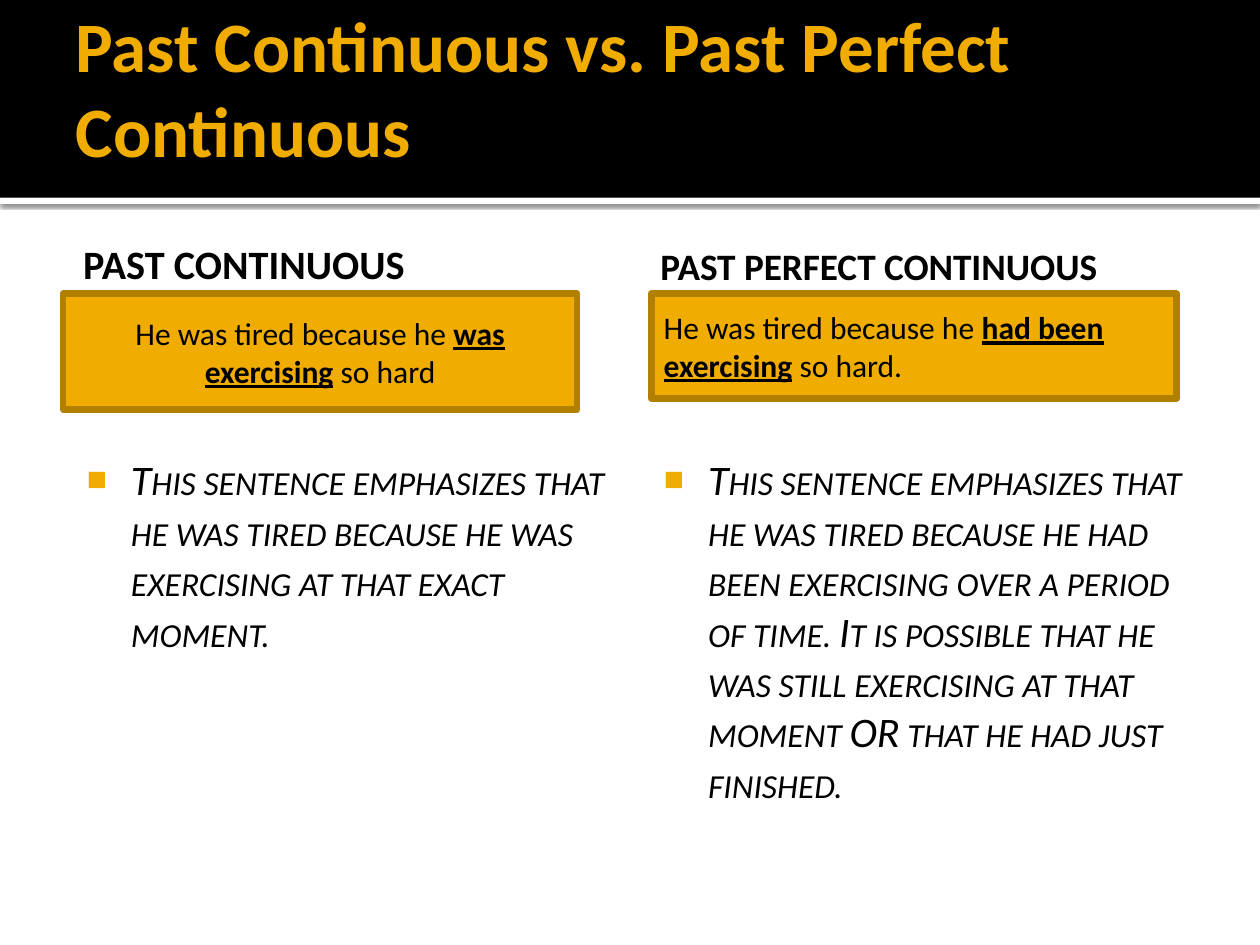
from lxml import etree
from pptx import Presentation
from pptx import util as u
from pptx.dml.color import RGBColor
from pptx.enum import shapes, text
from pptx.oxml.ns import qn

COLORS = {"black": "000000", "white": "FFFFFF", "gold": "F0AD00", "brown": "B28000"}
MIDDLE, TOP = text.MSO_ANCHOR.MIDDLE, text.MSO_ANCHOR.TOP
LEFT, CENTER = text.PP_ALIGN.LEFT, text.PP_ALIGN.CENTER


def rgb(name):
    return RGBColor.from_string(COLORS[name])


def assign(obj, values):
    for key, value in values.items():
        setattr(obj, key, value)


class Deck:
    font = "Calibri"

    def __init__(self, width, height):
        self.prs = Presentation()
        assign(self.prs, {"slide_width": u.Pt(width), "slide_height": u.Pt(height)})
        self.s = self.prs.slides.add_slide(self.prs.slide_layouts[4])

    def rect(self, box, fill):
        sp = self.s.shapes.add_shape(shapes.MSO_SHAPE.RECTANGLE, *map(u.Pt, box))
        sp.shadow.inherit = False
        sp.fill.solid()
        sp.fill.fore_color.rgb = rgb(fill)
        sp.line.fill.background()
        return sp

    def band(self, box, fill, shadow=False):
        sp = self.rect(box, fill)
        if shadow:
            effects = sp._element.spPr.find(qn("a:effectLst"))
            outer = etree.SubElement(effects, qn("a:outerShdw"), blurRad=str(u.Pt(2.5)),
                                     dist=str(u.Pt(0.8)), dir="5400000")
            color = etree.SubElement(outer, qn("a:srgbClr"), val=COLORS["black"])
            etree.SubElement(color, qn("a:alpha"), val="60000")
        sp._element.getparent().insert(2, sp._element)

    def add_text(self, tf, runs, size, color="black", align=LEFT, **fmt):
        p = tf.paragraphs[0]
        assign(p, {"alignment": align, "space_before": u.Pt(0)})
        for words, extra in runs:
            r = p.add_run()
            r.text = words
            assign(r.font, {"name": self.font, "size": u.Pt(size), **fmt, **extra})
            r.font.color.rgb = rgb(color)
        return p

    def placeholder(self, idx, box, insets, anchor, words, size, **fmt):
        sp = self.s.placeholders[idx]
        assign(sp, dict(zip(("left", "top", "width", "height"), map(u.Pt, box))))
        tf = sp.text_frame
        sides = ("margin_left", "margin_top", "margin_right", "margin_bottom")
        assign(tf, {"word_wrap": True, "auto_size": text.MSO_AUTO_SIZE.NONE,
                    "vertical_anchor": anchor, **dict(zip(sides, map(u.Pt, insets)))})
        return self.add_text(tf, [(words, {})], size, **fmt)

    def bullet(self, idx, box, words):
        p = self.placeholder(idx, box, (4.3, 66.4, 7.2, 3.6), TOP, words, 24, italic=True)
        p.line_spacing = u.Pt(28.8)
        pPr = p._p.get_or_add_pPr()
        for key, value in {"marL": u.Pt(34.5), "indent": u.Pt(-25.2)}.items():
            pPr.set(key, str(value))
        color = etree.SubElement(pPr, qn("a:buClr"))
        etree.SubElement(color, qn("a:srgbClr"), val=COLORS["gold"])
        etree.SubElement(pPr, qn("a:buSzPct"), val="80000")
        etree.SubElement(pPr, qn("a:buFont"), typeface="Arial")
        etree.SubElement(pPr, qn("a:buChar"), char="■")
        for r in p.runs:
            r._r.get_or_add_rPr().set("cap", "small")

    def example(self, box, before, verb, after, align):
        sp = self.rect(box, "gold")
        sp.line.color.rgb = rgb("brown")
        sp.line.width = u.Pt(3.78)
        assign(sp.text_frame, {"word_wrap": True, "vertical_anchor": MIDDLE})
        runs = [(before, {}), (verb, {"bold": True, "underline": True}), (after, {})]
        self.add_text(sp.text_frame, runs, 18, align=align)


def main():
    deck = Deck(720, 540)
    deck.band((0, 0, 720, 113), "black")
    deck.band((0, 113, 720, 3.6), "white", shadow=True)
    deck.placeholder(0, (36, 30.2, 635.8, 80.6), (7.2, 3.6, 3.6, 46), MIDDLE,
                     "Past Continuous vs. Past Perfect Continuous", 40.5,
                     color="gold", bold=True)
    columns = [
        (36, "PAST CONTINUOUS", 23, 30,
         "This sentence emphasizes that he was tired because he was exercising "
         "at that exact moment.",
         (36, 167.8, 293.8, 66.2), "was exercising", " so hard", CENTER),
        (365.8, "PAST PERFECT CONTINUOUS", 21.3, 27.4,
         "This sentence emphasizes that he was tired because he had been exercising "
         "over a period of time. It is possible that he was still exercising at that "
         "moment OR that he had just finished.",
         (372.2, 167.8, 300.2, 59.8), "had been exercising", " so hard.", LEFT),
    ]
    for i, (x, head, size, gap, note, box, verb, after, align) in enumerate(columns):
        deck.placeholder(1 + 2 * i, (x, 133.9, 318.2, 56.2), (11.5, 7.2, 7.2, gap),
                         MIDDLE, head, size, bold=True)
        deck.bullet(2 + 2 * i, (x, 193, 318.2, 311), note)
        deck.example(box, "He was tired because he ", verb, after, align)
    deck.prs.save("out.pptx")


if __name__ == "__main__":
    main()
